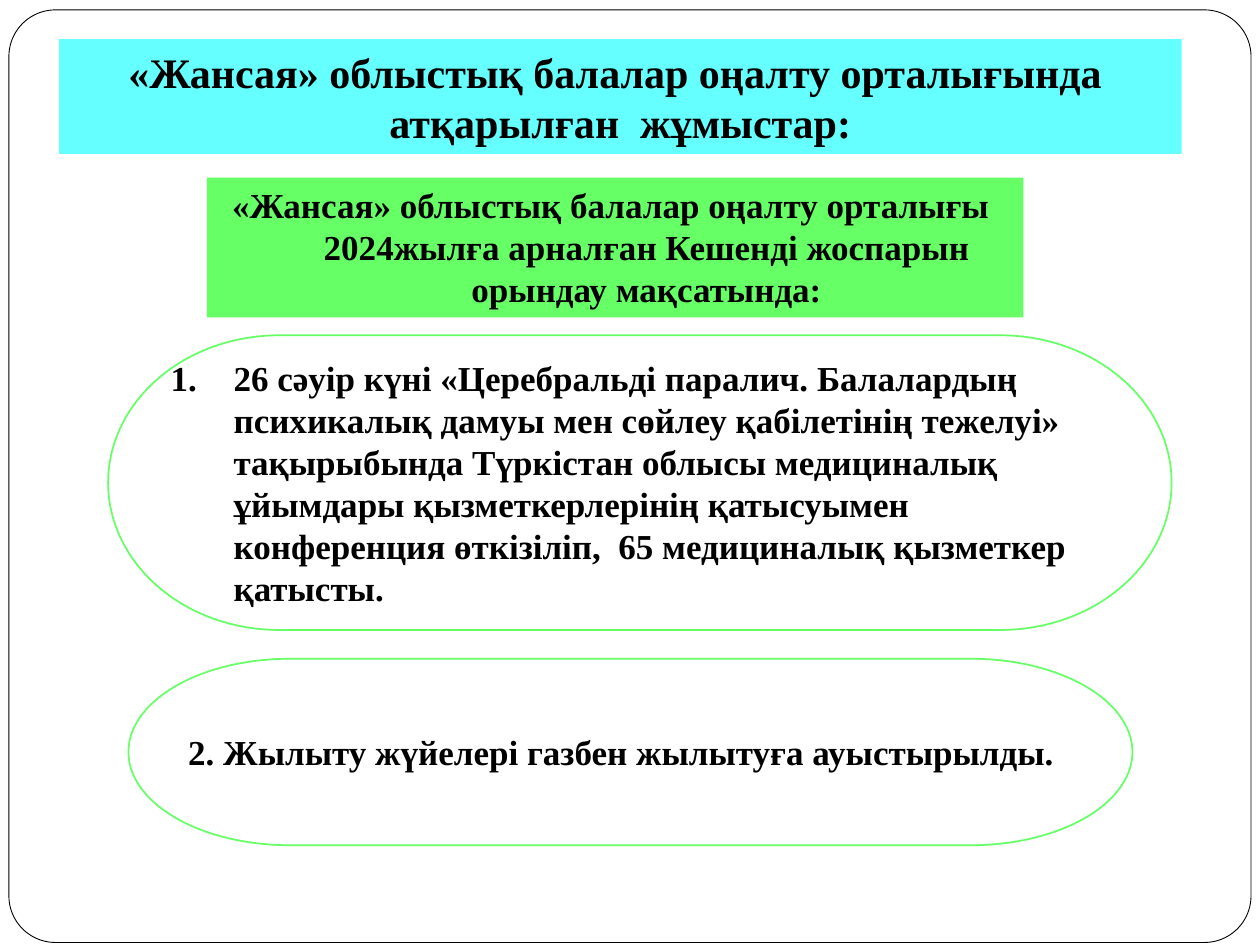
from lxml import etree
from pptx import Presentation
from pptx.dml.color import RGBColor
from pptx.enum import shapes, text
from pptx.oxml.ns import qn
from pptx.util import Cm, Pt

WHITE = RGBColor(0xFF, 0xFF, 0xFF)
BLACK = RGBColor(0, 0, 0)
CYAN = RGBColor(0x66, 0xFF, 0xFF)
GREEN = RGBColor(0x66, 0xFF, 0x66)
FONT = "Times New Roman"
HANGING = Cm(1.27)


def place(shape, left, top, width, height):
    """Set position and size, given in centimetres."""
    shape.left, shape.top = Cm(left), Cm(top)
    shape.width, shape.height = Cm(width), Cm(height)


def add_box(slide, kind, box, fill, line=None, line_width=1):
    """Add a flat filled shape, outlined only if a line colour is given."""
    shape = slide.shapes.add_shape(kind, *(Cm(length) for length in box))
    shape.shadow.inherit = False
    shape.fill.solid()
    shape.fill.fore_color.rgb = fill
    if line is None:
        shape.line.fill.background()
    else:
        shape.line.color.rgb = line
        shape.line.width = Pt(line_width)
    return shape


def write(shape, words, size=20, align=text.PP_ALIGN.LEFT,
          anchor=text.MSO_ANCHOR.MIDDLE, hanging=False, numbered=False, grow=False):
    """Put one bold paragraph into a shape."""
    frame = shape.text_frame
    frame.word_wrap = True
    frame.vertical_anchor = anchor
    frame.auto_size = (text.MSO_AUTO_SIZE.SHAPE_TO_FIT_TEXT if grow
                       else text.MSO_AUTO_SIZE.NONE)
    paragraph = frame.paragraphs[0]
    paragraph.alignment = align
    run = paragraph.add_run()
    run.text = words
    run.font.name, run.font.size, run.font.bold = FONT, Pt(size), True
    run.font.color.rgb = BLACK
    properties = paragraph._p.get_or_add_pPr()
    if hanging:
        properties.set("marL", str(HANGING))
        properties.set("indent", str(-HANGING))
    if numbered:
        etree.SubElement(properties, qn("a:buFont"), typeface="+mj-lt")
        etree.SubElement(properties, qn("a:buAutoNum"), type="arabicPeriod")


def main():
    deck = Presentation()
    deck.slide_width, deck.slide_height = Cm(25.4), Cm(19.05)
    slide = deck.slides.add_slide(deck.slide_layouts[5])
    preset = shapes.MSO_SHAPE

    # Rounded page border, behind the title
    border = add_box(slide, preset.ROUNDED_RECTANGLE, (0.18, 0.2, 25.04, 18.8),
                     WHITE, BLACK, 0.5)
    border.adjustments[0] = 0.05
    title = slide.shapes.title
    title.element.addprevious(border.element)

    # Title
    place(title, 1.19, 0.79, 22.63, 2.31)
    title.fill.solid()
    title.fill.fore_color.rgb = CYAN
    write(title, "«Жансая» облыстық балалар оңалту орталығында  атқарылған  жұмыстар:",
          size=24, align=text.PP_ALIGN.CENTER, grow=True)

    # Completed work
    conference = add_box(slide, preset.FLOWCHART_TERMINATOR,
                         (2.18, 6.76, 21.44, 5.94), WHITE, GREEN)
    write(conference,
          "26 сәуір күні «Церебральді паралич. Балалардың психикалық дамуы мен "
          "сөйлеу қабілетінің тежелуі» тақырыбында Түркістан облысы медициналық "
          "ұйымдары қызметкерлерінің қатысуымен конференция өткізіліп,  "
          "65 медициналық қызметкер қатысты.", hanging=True, numbered=True)
    heating = add_box(slide, preset.FLOWCHART_TERMINATOR,
                      (2.59, 13.28, 20.24, 3.76), WHITE, GREEN)
    write(heating, "2. Жылыту жүйелері газбен жылытуға ауыстырылды.")

    # Purpose of the work
    purpose = add_box(slide, preset.RECTANGLE, (4.17, 3.58, 16.46, 2.82), GREEN)
    write(purpose,
          "«Жансая» облыстық балалар оңалту орталығы  2024жылға арналған "
          "Кешенді жоспарын орындау мақсатында:", align=text.PP_ALIGN.CENTER,
          anchor=text.MSO_ANCHOR.TOP, hanging=True, grow=True)

    deck.save("out.pptx")


if __name__ == "__main__":
    main()
